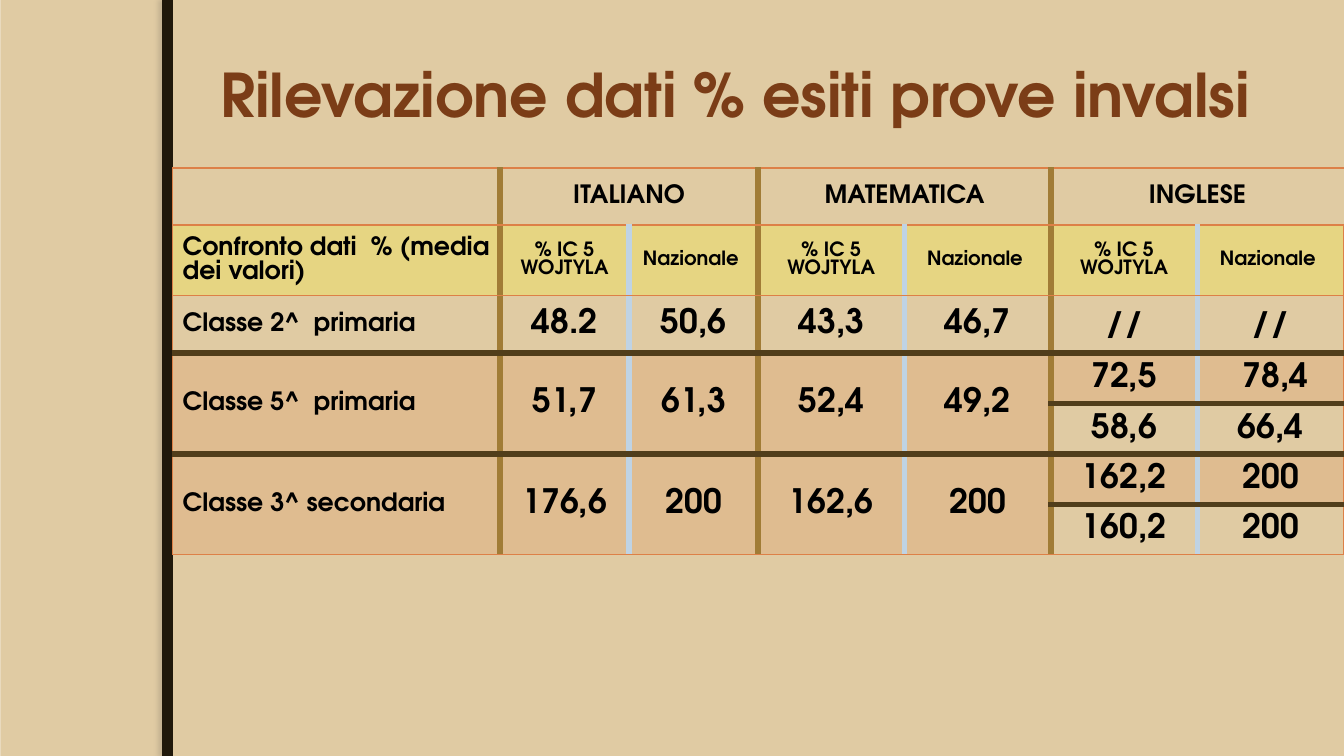
from lxml import etree
from pptx import Presentation
from pptx.dml.color import RGBColor
from pptx.enum.shapes import MSO_SHAPE
from pptx.enum.text import MSO_ANCHOR, PP_ALIGN
from pptx.oxml.ns import qn
from pptx.util import Pt

FONT = "TeX Gyre Adventor"
COLORS = {
    "background": "EBDDC3", "panel": "E0CBA3", "band": "20190B",
    "shadow": "766E60", "title": "7B3D17", "text": "000000",
    "yellow": "FFFF00", "orange": "DD8047", "brown": "A17C36",
    "blue": "BFD3E4", "dark": "513E1B",
}
SUBJECTS = ["ITALIANO", "MATEMATICA", "INGLESE"]
SUBHEADS = ["Confronto dati  % (media dei valori)"] + ["% IC 5 WOJTYLA", "Nazionale "] * 3
RESULTS = [
    ["Classe 2^  primaria", "48.2", "50,6", "43,3", "46,7", "//", "//"],
    ["Classe 5^  primaria", "51,7", "61,3", "52,4", "49,2", "72,5", " 78,4"],
    [""] * 5 + ["58,6", "66,4"],
    ["Classe 3^ secondaria", "176,6", "200", "162,6", "200", "162,2", "200"],
    [""] * 5 + ["160,2", "200"],
]
COLUMN_WIDTHS = [234, 92.1, 92.1, 104.6, 104.6, 104.6, 104.6]
ROW_HEIGHTS = [40.9] * 3 + [20.2] * 4
SPLIT_ROWS = (3, 5)
ENGLISH = 5

THIN, HEADER_RULE = ("orange", 1), ("orange", 2)
SUBJECT_RULE, PAIR_RULE, CLASS_RULE = ("brown", 4.5), ("blue", 4.5), ("dark", 4.5)
VERTICAL_RULES = [THIN] + [SUBJECT_RULE, PAIR_RULE] * 3 + [THIN]
HORIZONTAL_RULES = [THIN, HEADER_RULE, THIN] + [CLASS_RULE] * 4 + [THIN]


def rgb(name):
    return RGBColor.from_string(COLORS[name])


def style(paragraph, size, color, align=PP_ALIGN.LEFT):
    paragraph.alignment = align
    font = paragraph.font
    font.name, font.size, font.bold = FONT, Pt(size), True
    font.color.rgb = rgb(color)


def add_color(parent, name, opacity=100):
    color = etree.SubElement(parent, qn("a:srgbClr"), val=COLORS[name])
    etree.SubElement(color, qn("a:alpha"), val=str(opacity * 1000))


def add_bar(slide, left, top, width, height, color):
    bar = slide.shapes.add_shape(MSO_SHAPE.RECTANGLE, Pt(left), Pt(top), Pt(width), Pt(height))
    bar.shadow.inherit = False
    bar.fill.solid()
    bar.fill.fore_color.rgb = rgb(color)
    bar.line.fill.background()
    return bar


def add_backdrop(slide, width, height):
    slide.background.fill.solid()
    slide.background.fill.fore_color.rgb = rgb("background")
    add_bar(slide, 0.7, 0, width - 0.7, height, "panel")
    band = add_bar(slide, 115.9, 0, 7.7, height, "band")
    effects = band._element.spPr.find(qn("a:effectLst"))
    shadow = etree.SubElement(effects, qn("a:outerShdw"), blurRad=str(Pt(3)),
                              dist=str(Pt(3)), dir="10800000", rotWithShape="0")
    add_color(shadow, "shadow", 25)


def add_title(slide, left, top, width, height):
    frame = slide.shapes.add_textbox(Pt(left), Pt(top), Pt(width), Pt(height)).text_frame
    frame.word_wrap = True
    frame.vertical_anchor = MSO_ANCHOR.MIDDLE
    frame.text = "Rilevazione dati % esiti prove invalsi"
    style(frame.paragraphs[0], 43, "title")


def set_borders(cell, row, column):
    """Apply the grid rules around a cell, leaving merged interiors open."""
    inner_pair = row == 0 and column > 0
    merged = column < ENGLISH
    bottom = row + 2 if merged and row in SPLIT_ROWS else row + 1
    rules = {
        "lnL": None if inner_pair and column % 2 == 0 else VERTICAL_RULES[column],
        "lnR": None if inner_pair and column % 2 == 1 else VERTICAL_RULES[column + 1],
        "lnT": None if merged and row - 1 in SPLIT_ROWS else HORIZONTAL_RULES[row],
        "lnB": HORIZONTAL_RULES[bottom],
    }
    properties = cell._tc.get_or_add_tcPr()
    for side, rule in rules.items():
        color, weight = rule or (None, 0)
        line = etree.SubElement(properties, qn(f"a:{side}"), w=str(Pt(weight)))
        if color:
            add_color(etree.SubElement(line, qn("a:solidFill")), color)
        else:
            etree.SubElement(line, qn("a:noFill"))


def tint(cell, row, column):
    if row == 1:
        color = "yellow"
    elif row in SPLIT_ROWS or (row > 3 and column < ENGLISH):
        color = "orange"
    else:
        cell.fill.background()
        return
    add_color(etree.SubElement(cell._tc.tcPr, qn("a:solidFill")), color, 20)


def font_size(row, column):
    if column == 0 or row == 0:
        return 18
    return 14 if row == 1 else 24


def add_results(slide, left, top, width, height):
    rows = [[""] + [text for name in SUBJECTS for text in (name, "")], SUBHEADS] + RESULTS
    table = slide.shapes.add_table(len(rows), len(COLUMN_WIDTHS), Pt(left), Pt(top),
                                   Pt(width), Pt(height)).table
    table.first_row = table.horz_banding = False
    for column, column_width in zip(table.columns, COLUMN_WIDTHS):
        column.width = Pt(column_width)
    for row, row_height in zip(table.rows, ROW_HEIGHTS):
        row.height = Pt(row_height)
    for r, texts in enumerate(rows):
        for c, text in enumerate(texts):
            cell = table.cell(r, c)
            cell.text = text
            cell.vertical_anchor = MSO_ANCHOR.MIDDLE
            style(cell.text_frame.paragraphs[0], font_size(r, c), "text",
                  PP_ALIGN.CENTER if c else PP_ALIGN.LEFT)
            set_borders(cell, r, c)
            tint(cell, r, c)
    for c in (1, 3, 5):
        table.cell(0, c).merge(table.cell(0, c + 1))
    for r in SPLIT_ROWS:
        for c in range(ENGLISH):
            table.cell(r, c).merge(table.cell(r + 1, c))


def main():
    deck = Presentation()
    deck.slide_width, deck.slide_height = Pt(960), Pt(540)
    slide = deck.slides.add_slide(deck.slide_layouts[6])
    add_backdrop(slide, 960, 540)
    add_title(slide, 150.5, 21.6, 787, 90)
    add_results(slide, 123.3, 120, 836.7, 276.5)
    deck.save("out.pptx")


if __name__ == "__main__":
    main()
